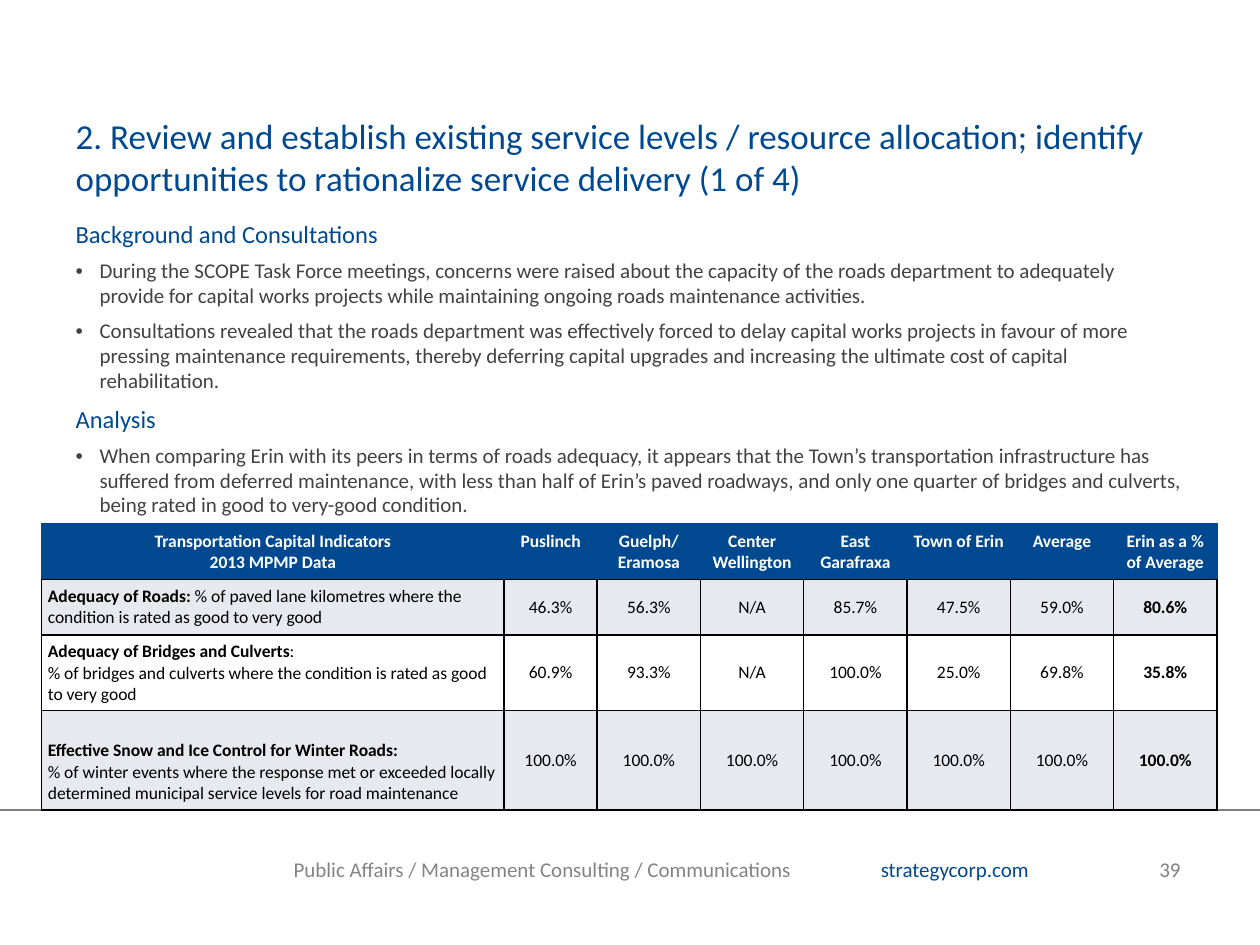
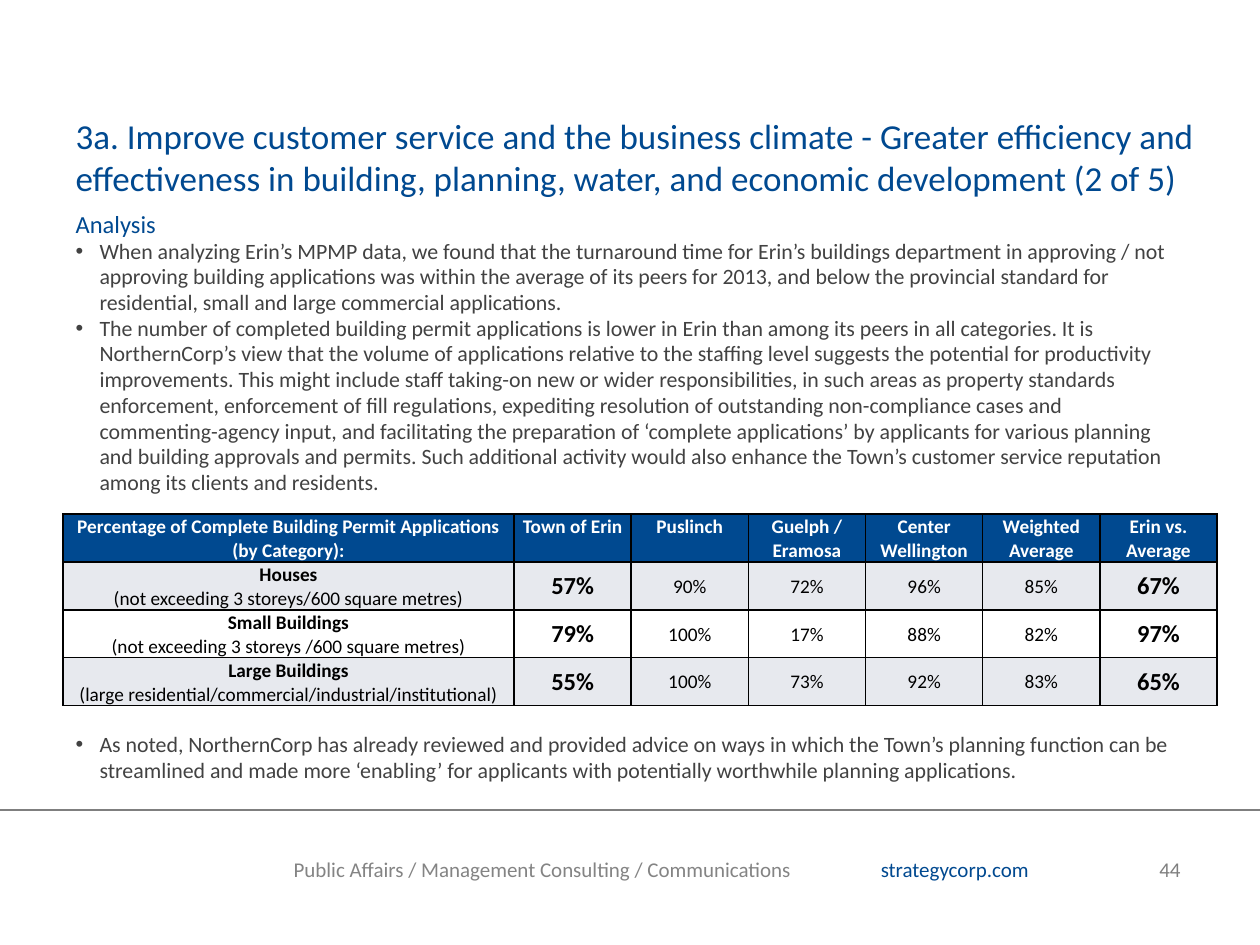
from lxml import etree
from pptx import Presentation
from pptx.dml.color import RGBColor
from pptx.enum.shapes import MSO_CONNECTOR
from pptx.enum.text import MSO_ANCHOR, MSO_AUTO_SIZE, PP_ALIGN
from pptx.oxml.ns import qn
from pptx.util import Inches, Pt

LEFT, CENTER = PP_ALIGN.LEFT, PP_ALIGN.CENTER
TOP, MIDDLE, BOTTOM = MSO_ANCHOR.TOP, MSO_ANCHOR.MIDDLE, MSO_ANCHOR.BOTTOM
NO_FIT = MSO_AUTO_SIZE.NONE
STRAIGHT = MSO_CONNECTOR.STRAIGHT

FONT = "Calibri"
BLUE, INK, BLACK, WHITE = "004990", "424242", "000000", "FFFFFF"
GREY, FOOTER_GREY, BAND = "7F7F7F", "848484", "E7E9EE"

# The grid: 100 columns by 75 rows on the slide
COLUMNS, ROWS = 100, 75
WIDTH, HEIGHT = Inches(10), Inches(7.5)
HANG = 1.9


def color(code):
    return RGBColor.from_string(code)


def across(columns):
    return round(WIDTH * columns / COLUMNS)


def down(rows):
    return round(HEIGHT * rows / ROWS)


def set_all(target, formats):
    for name, value in formats.items():
        setattr(target, name, value)


def margins(left, top, right, bottom):
    return {"margin_left": across(left), "margin_top": down(top),
            "margin_right": across(right), "margin_bottom": down(bottom)}


class Report:
    """Holds the deck, its style and the current page."""

    def __init__(self):
        self.deck = Presentation()
        set_all(self.deck, {"slide_width": WIDTH, "slide_height": HEIGHT})
        self.page = None

    def place(self, shape, left, top, width, height):
        set_all(shape, {"left": across(left), "top": down(top),
                        "width": across(width), "height": down(height)})

    def span(self, para, text, size, code, bold=False):
        run = para.add_run()
        run.text = text
        set_all(run.font, {"name": FONT, "size": Pt(size), "bold": bold})
        run.font.color.rgb = color(code)

    def paragraphs(self, frame, count):
        """Yield the first paragraph of a frame, then new ones."""
        for index in range(count):
            yield frame.add_paragraph() if index else frame.paragraphs[0]

    def start(self, title, number):
        self.page = self.deck.slides.add_slide(self.deck.slide_layouts[1])
        self.footer(number)
        box = self.page.shapes.title
        self.place(box, 5, 9.1, 90.3, 3.4)
        set_all(box.text_frame, {"word_wrap": True, "auto_size": NO_FIT,
                                 "vertical_anchor": TOP, **margins(1, 0, 0, 0)})
        para = box.text_frame.paragraphs[0]
        para.alignment = LEFT
        self.span(para, title, 20, BLUE)

    def text_box(self, left, width):
        box = self.page.shapes.add_textbox(0, 0, 0, 0)
        self.place(box, left, 68, width, 2)
        set_all(box.text_frame, {"word_wrap": True, **margins(0, 0, 0, 0)})
        return box.text_frame.paragraphs[0]

    def footer(self, number):
        para = self.text_box(69.9, 25.1)
        tabs = etree.SubElement(para._p.get_or_add_pPr(), qn("a:tabLst"))
        etree.SubElement(tabs, qn("a:tab"), pos=str(across(23.8)), algn="r")
        self.span(para, "strategycorp.com", 12, BLUE)
        self.span(para, f"\t{number}", 12, GREY)
        self.span(self.text_box(23.3, 44.2),
                  "Public Affairs / Management Consulting / Communications",
                  12, FOOTER_GREY)
        rule = self.page.shapes.add_connector(
            STRAIGHT, 0, down(64.3), WIDTH, down(64.3))
        rule.line.color.rgb = color(GREY)
        rule.line.width = Pt(1)
        etree.SubElement(rule._element.spPr, qn("a:effectLst"))

    def body(self, top, items, size, gap):
        """Items are (kind, text) or (kind, text, space before in points)."""
        box = self.page.placeholders[1]
        self.place(box, 5, top, 90, 62.5 - top)
        frame = box.text_frame
        set_all(frame, {"word_wrap": True, "auto_size": NO_FIT,
                        "vertical_anchor": TOP, **margins(1, 0.5, 1, 0.5)})
        for index, para in enumerate(self.paragraphs(frame, len(items))):
            kind, text, *space = items[index]
            is_bullet = kind == "bullet"
            props = para._p.get_or_add_pPr()
            props.set("marL", str(across(HANG)))
            props.set("indent", str(-across(HANG)))
            if is_bullet:
                etree.SubElement(props, qn("a:buChar"), char="•")
            else:
                etree.SubElement(props, qn("a:buNone"))
            before = space[0] if space else gap
            set_all(para, {"alignment": LEFT,
                           "space_before": Pt(before if index else 0),
                           "line_spacing": 0.98 if is_bullet else 1.0})
            if is_bullet:
                self.span(para, text, size, INK)
            else:
                self.span(para, text, 14, BLUE)

    def borders(self, cell, codes):
        props = cell._tc.get_or_add_tcPr()
        for index, (side, code) in enumerate(zip("LRTB", codes)):
            line = etree.Element(qn(f"a:ln{side}"), w=str(Pt(1)))
            fill = etree.SubElement(line, qn("a:solidFill"))
            etree.SubElement(fill, qn("a:srgbClr"), val=code)
            props.insert(index, line)

    def cell(self, cell, lines, size, code, align):
        """Each line is a list of (text, bold) pairs."""
        cell.text_frame.word_wrap = True
        for para, line in zip(self.paragraphs(cell.text_frame, len(lines)), lines):
            para.alignment = align
            for text, bold in line:
                self.span(para, text, size, code, bold)

    def table(self, left, top, widths, heights, header, rows, style):
        frame = self.page.shapes.add_table(
            len(heights), len(widths), across(left), down(top),
            across(sum(widths)), down(sum(heights)))
        table = frame.table
        set_all(table, {"first_row": False, "horz_banding": False})
        for column, width in zip(table.columns, widths):
            column.width = across(width)
        for row, height in zip(table.rows, heights):
            row.height = down(height)

        size, edge = style["size"], style["header_edge"]
        for r, texts in enumerate([header] + rows):
            for c, content in enumerate(texts):
                cell = table.cell(r, c)
                set_all(cell, style["margins"])
                cell.fill.solid()
                if r == 0:
                    cell.fill.fore_color.rgb = color(BLUE)
                    cell.vertical_anchor = TOP
                    lines = [[(text, True)] for text in content.split("\n")]
                    self.cell(cell, lines, size, WHITE, CENTER)
                    self.borders(cell, [edge, edge, edge, BLACK])
                    continue
                cell.fill.fore_color.rgb = color(BAND if r % 2 else WHITE)
                self.borders(cell, [BLACK] * 4)
                if c == 0:
                    cell.vertical_anchor = style["label_anchor"]
                    self.cell(cell, content, size, BLACK, style["label_align"])
                else:
                    cell.vertical_anchor = MIDDLE
                    strong = c in style["strong"]
                    self.cell(cell, [[(content, strong)]],
                              style["strong_size"] if strong else size,
                              BLACK, CENTER)


def service_levels(report):
    report.start("2. Review and establish existing service levels / resource "
                 "allocation; identify opportunities to rationalize service "
                 "delivery (1 of 4)", 39)
    report.body(16.9, [
        ("heading", "Background and Consultations"),
        ("bullet", "During the SCOPE Task Force meetings, concerns were raised "
         "about the capacity of the roads department to adequately provide for "
         "capital works projects while maintaining ongoing roads maintenance "
         "activities."),
        ("bullet", "Consultations revealed that the roads department was "
         "effectively forced to delay capital works projects in favour of more "
         "pressing maintenance requirements, thereby deferring capital upgrades "
         "and increasing the ultimate cost of capital rehabilitation."),
        ("heading", "Analysis"),
        ("bullet", "When comparing Erin with its peers in terms of roads "
         "adequacy, it appears that the Town’s transportation infrastructure has "
         "suffered from deferred maintenance, with less than half of Erin’s paved "
         "roadways, and only one quarter of bridges and culverts, being rated in "
         "good to very-good condition."),
    ], size=12, gap=6)

    # Road indicators
    roads = [[("Adequacy of Roads: ", True),
              ("% of paved lane kilometres where the condition is rated as good "
               "to very good", False)]]
    bridges = [[("Adequacy of Bridges and Culverts", True), (":", False)],
               [("% of bridges and culverts where the condition is rated as good "
                 "to very good", False)]]
    winter = [[("Effective Snow and Ice Control for Winter Roads:", True)],
              [("% of winter events where the response met or exceeded locally "
                "determined municipal service levels for road maintenance", False)]]
    report.table(
        3.3, 41.6, [36.7, 7.4] + [8.2] * 6, [4.4, 4.4, 6, 7.9],
        ["Transportation Capital Indicators\n2013 MPMP Data", "Puslinch",
         "Guelph/ Eramosa", "Center Wellington", "East Garafraxa",
         "Town of Erin", "Average", "Erin as a % of Average"],
        [[roads, "46.3%", "56.3%", "N/A", "85.7%", "47.5%", "59.0%", "80.6%"],
         [bridges, "60.9%", "93.3%", "N/A", "100.0%", "25.0%", "69.8%", "35.8%"],
         [winter] + ["100.0%"] * 7],
        {"size": 10, "strong_size": 10, "strong": {7}, "header_edge": BLUE,
         "label_anchor": BOTTOM, "label_align": LEFT,
         "margins": margins(0.5, 0.5, 0.5, 0.5)})


def customer_service(report):
    report.start("3a. Improve customer service and the business climate - Greater "
                 "efficiency and effectiveness in building, planning, water, and "
                 "economic development (2 of 5)", 44)
    report.body(16.1, [
        ("heading", "Analysis"),
        ("bullet", "When analyzing Erin’s MPMP data, we found that the turnaround "
         "time for Erin’s buildings department in approving / not approving "
         "building applications was within the average of its peers for 2013, "
         "and below the provincial standard for residential, small and large "
         "commercial applications."),
        ("bullet", "The number of completed building permit applications is lower "
         "in Erin than among its peers in all categories. It is NorthernCorp’s "
         "view that the volume of applications relative to the staffing level "
         "suggests the potential for productivity improvements. This might "
         "include staff taking-on new or wider responsibilities, in such areas "
         "as property standards enforcement, enforcement of fill regulations, "
         "expediting resolution of outstanding non-compliance cases and "
         "commenting-agency input, and facilitating the preparation of ‘complete "
         "applications’ by applicants for various planning and building approvals "
         "and permits. Such additional activity would also enhance the Town’s "
         "customer service reputation among its clients and residents."),
        ("bullet", "As noted, NorthernCorp has already reviewed and provided "
         "advice on ways in which the Town’s planning function can be streamlined "
         "and made more ‘enabling’ for applicants with potentially worthwhile "
         "planning applications.", 135),
    ], size=12.5, gap=0)

    # Building permits
    permits = [
        ("Houses", "(not exceeding 3 storeys/600 square metres)",
         "57%", "90%", "72%", "96%", "85%", "67%"),
        ("Small Buildings", "(not exceeding 3 storeys /600 square metres)",
         "79%", "100%", "17%", "88%", "82%", "97%"),
        ("Large Buildings", "(large residential/commercial/industrial/institutional)",
         "55%", "100%", "73%", "92%", "83%", "65%"),
    ]
    report.table(
        5, 40.8, [35.8] + [9.3] * 6, [3.8] * 4,
        ["Percentage of Complete Building Permit Applications\n(by Category):",
         "Town of Erin", "Puslinch", "Guelph / Eramosa", "Center Wellington",
         "Weighted Average", "Erin vs. Average"],
        [[[[(name, True)], [(limit, False)]], *values]
         for name, limit, *values in permits],
        {"size": 11, "strong_size": 14, "strong": {1, 6}, "header_edge": BLACK,
         "label_anchor": MIDDLE, "label_align": CENTER,
         "margins": margins(0.1, 0.1, 0.1, 0)})


def main():
    report = Report()
    service_levels(report)
    customer_service(report)
    report.deck.save("out.pptx")


if __name__ == "__main__":
    main()
